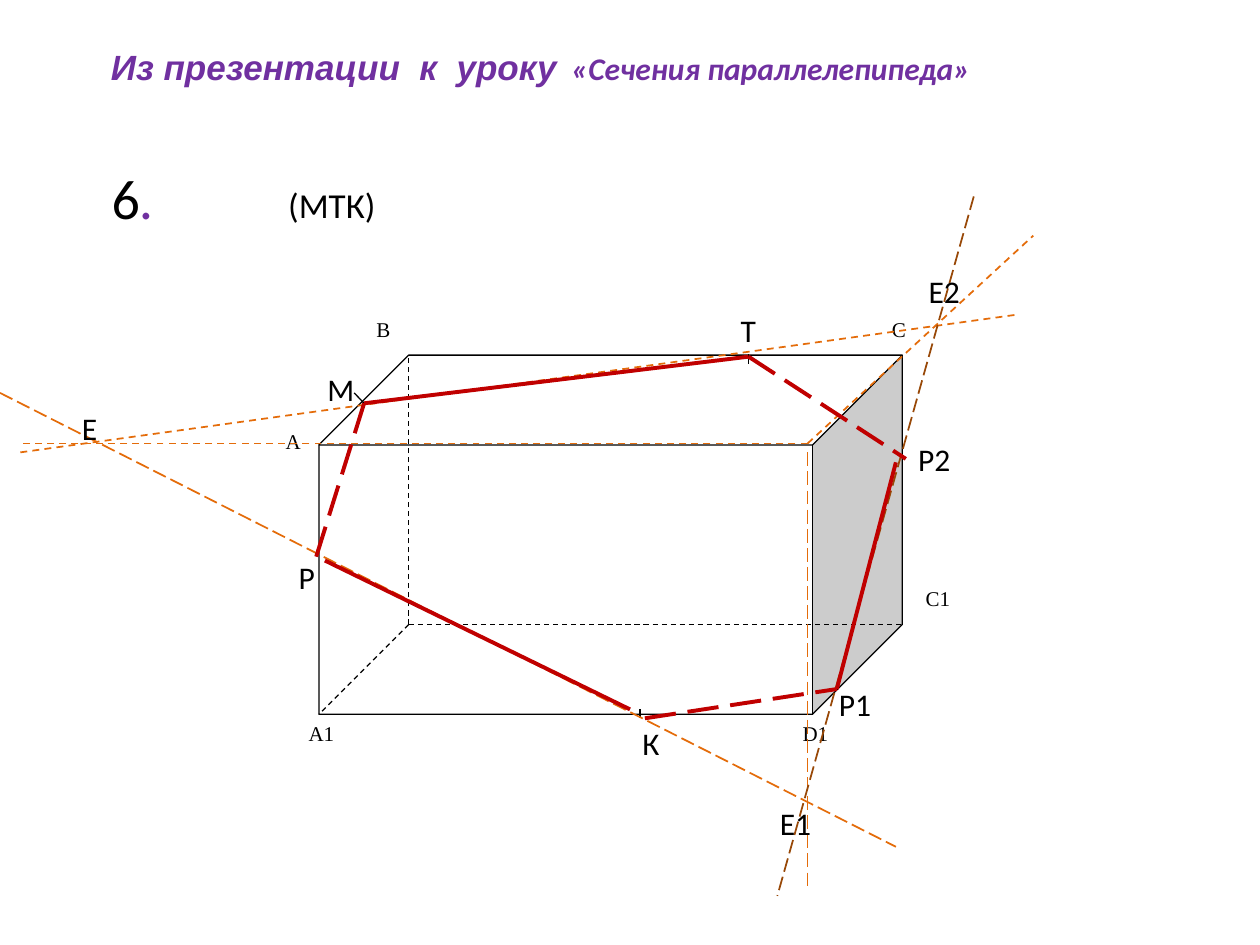
from typing import NamedTuple

from lxml.etree import SubElement
from pptx import Presentation
from pptx.dml.color import RGBColor
from pptx.enum.dml import MSO_LINE
from pptx.enum.shapes import MSO_CONNECTOR, MSO_SHAPE
from pptx.enum.text import MSO_ANCHOR, MSO_AUTO_SIZE, PP_ALIGN
from pptx.oxml.ns import qn
from pptx.util import Cm, Pt

COLORS = {
    "black": "000000",
    "white": "FFFFFF",
    "purple": "7030A0",
    "orange": "E46C0A",
    "brown": "984807",
    "red": "C00000",
}
DASH, LONG_DASH = MSO_LINE.DASH, MSO_LINE.LONG_DASH

# Box measures in centimetres
LEFT, TOP, WIDTH, HEIGHT = 6.43, 7.16, 11.76, 7.24
DEPTH = HEIGHT / 4
RIGHT, BOTTOM = LEFT + WIDTH, TOP + HEIGHT
LETTER_HEIGHT = 1.02


class Point(NamedTuple):
    x: float
    y: float


class TextRun(NamedTuple):
    text: str
    size: int
    font: str = "Calibri"
    color: str = "black"
    bold: bool = False
    italic: bool = False


class Label(NamedTuple):
    text: str
    left: float
    top: float
    width: float
    height: float = LETTER_HEIGHT
    inset: float = 0.25


class Segment(NamedTuple):
    start: Point
    end: Point
    color: str = "black"
    width: float = 0.75
    dash: MSO_LINE | None = None


def rgb(name: str) -> RGBColor:
    return RGBColor.from_string(COLORS[name])


def write(shape, *text_runs: TextRun, align=PP_ALIGN.LEFT) -> None:
    shape.text_frame.vertical_anchor = MSO_ANCHOR.TOP
    paragraph = shape.text_frame.paragraphs[0]
    paragraph.alignment = align
    for text_run in text_runs:
        run = paragraph.add_run()
        run.text = text_run.text
        run.font.name = text_run.font
        run.font.size = Pt(text_run.size)
        run.font.bold = text_run.bold
        run.font.italic = text_run.italic
        run.font.color.rgb = rgb(text_run.color)


def add_text(shapes, label: Label, *text_runs: TextRun, align=PP_ALIGN.LEFT, wrap=True) -> None:
    box = shapes.add_textbox(*map(Cm, label[1:5]))
    box.text_frame.word_wrap = wrap
    box.text_frame.auto_size = MSO_AUTO_SIZE.SHAPE_TO_FIT_TEXT
    write(box, *text_runs, align=align)


def add_solid(shapes, kind: MSO_SHAPE, bounds: tuple, line_color: str):
    shape = shapes.add_shape(kind, *map(Cm, bounds))
    shape.shadow.inherit = False
    shape.fill.solid()
    shape.fill.fore_color.rgb = rgb("white")
    shape.line.color.rgb = rgb(line_color)
    shape.line.width = Pt(0.75)
    return shape


def add_segment(shapes, segment: Segment) -> None:
    connector = shapes.add_connector(
        MSO_CONNECTOR.STRAIGHT, *map(Cm, (*segment.start, *segment.end)))
    connector.line.color.rgb = rgb(segment.color)
    connector.line.width = Pt(segment.width)
    if segment.dash is not None:
        connector.line.dash_style = segment.dash
    SubElement(connector._element.spPr, qn("a:effectLst"))


VERTICES = [
    Label("C1", RIGHT, 11.68, 1.8, 1.8, inset=0.47),
    Label("D1", 15.93, BOTTOM, 1.8, 1.35),
    Label("A1", 5.97, BOTTOM, 1.8, 1.35),
    Label("С", 17.73, 6.25, 0.91, 1.37),
    Label("А", 5.51, 8.51, 0.89, 1.35),
    Label("В", 7.34, 6.25, 0.91, 1.37),
]
LETTERS = [
    Label("М", 6.35, 7.34, 0.99),
    Label("Т", 14.68, 6.15, 0.79),
    Label("К", 12.7, 14.48, 0.58),
    Label("Е", 1.4, 8.13, 0.79),
    Label("Р", 5.77, 11.13, 0.58),
    Label("Е1", 15.47, 16.08, 1.19),
    Label("Е2", 18.47, 5.36, 1.6),
    Label("Р1", 16.66, 13.69, 1.78),
    Label("Р2", 18.26, 8.74, 1.78),
]

HIDDEN_CORNER = Point(LEFT + DEPTH, BOTTOM - DEPTH)
POINT_M = Point(7.34, 8.13)
POINT_T = Point(15.09, 7.19)
POINT_P1 = Point(16.87, 13.89)
CORNER_D = Point(16.28, 8.94)

HIDDEN_EDGES = [
    Segment(HIDDEN_CORNER, end, dash=DASH)
    for end in (Point(LEFT + DEPTH, TOP), Point(RIGHT, BOTTOM - DEPTH), Point(LEFT, BOTTOM))
]
TICKS = [
    Segment(Point(7.14, 7.92), POINT_M),
    Segment(Point(15.09, 7.14), Point(15.09, 7.34)),
    Segment(Point(12.9, 14.3), Point(12.9, 14.48)),
]
CONSTRUCTION = [
    Segment(Point(0.41, 9.12), Point(20.45, 6.35), "orange", 1, DASH),
    Segment(CORNER_D, Point(0.41, 8.94), "orange", 1, DASH),
    Segment(CORNER_D, Point(20.83, 4.75), "orange", 1, DASH),
    Segment(Point(0, 7.92), Point(18.06, 17.07), "orange", 1, LONG_DASH),
    Segment(Point(16.28, 9.12), Point(16.28, 17.86), "orange", 1, LONG_DASH),
    Segment(Point(19.63, 3.96), Point(15.67, 18.06), "brown", 1, LONG_DASH),
]
SECTION = [
    Segment(POINT_M, POINT_T, "red", 2.25),
    Segment(POINT_M, Point(6.35, 11.3), "red", 2.25, LONG_DASH),
    Segment(Point(6.55, 11.3), Point(12.7, 14.3), "red", 2.25),
    Segment(Point(13, 14.48), POINT_P1, "red", 2.25, LONG_DASH),
    Segment(POINT_P1, Point(18.06, 9.32), "red", 2.25),
    Segment(POINT_T, Point(18.26, 9.25), "red", 2.25, LONG_DASH),
]


def main() -> None:
    presentation = Presentation()
    presentation.slide_width, presentation.slide_height = Cm(25.4), Cm(19.05)
    slide = presentation.slides.add_slide(presentation.slide_layouts[5])

    # Title and task
    title = slide.shapes.title
    title.left, title.top, title.width, title.height = map(Cm, (1.98, 0.79, 18.06, 1.12))
    title.text_frame.auto_size = MSO_AUTO_SIZE.NONE
    write(title,
          TextRun("Из презентации  к  уроку", 20, "Arial", "purple", True, True),
          TextRun("  «Сечения параллелепипеда»", 18, "Calibri", "purple", True, True))
    add_text(slide.shapes, Label("(МТК)", 5.56, 3.58, 2.29, 1.12),
             TextRun("(МТК)", 20), wrap=False)
    add_text(slide.shapes, Label("6.", 0, 3.18, 5.36, 1.63),
             TextRun("6", 32), TextRun(".", 32, color="purple", italic=True),
             align=PP_ALIGN.CENTER)

    # Box with its vertex names, hidden edges and tick marks
    box_shapes = slide.shapes.add_group_shape().shapes
    for vertex in VERTICES:
        plate = add_solid(box_shapes, MSO_SHAPE.RECTANGLE, vertex[1:5], "white")
        plate.text_frame.margin_left = Cm(vertex.inset)
        write(plate, TextRun(vertex.text, 12, "Times New Roman"))
    cube = add_solid(box_shapes, MSO_SHAPE.CUBE, (LEFT, TOP, WIDTH, HEIGHT), "black")
    cube.adjustments[0] = DEPTH / HEIGHT
    for segment in HIDDEN_EDGES + TICKS:
        add_segment(box_shapes, segment)

    # Construction lines, point letters and the section outline
    for segment in CONSTRUCTION:
        add_segment(slide.shapes, segment)
    for letter in LETTERS:
        add_text(slide.shapes, letter, TextRun(letter.text, 18))
    for segment in SECTION:
        add_segment(slide.shapes, segment)

    presentation.save("out.pptx")


if __name__ == "__main__":
    main()
